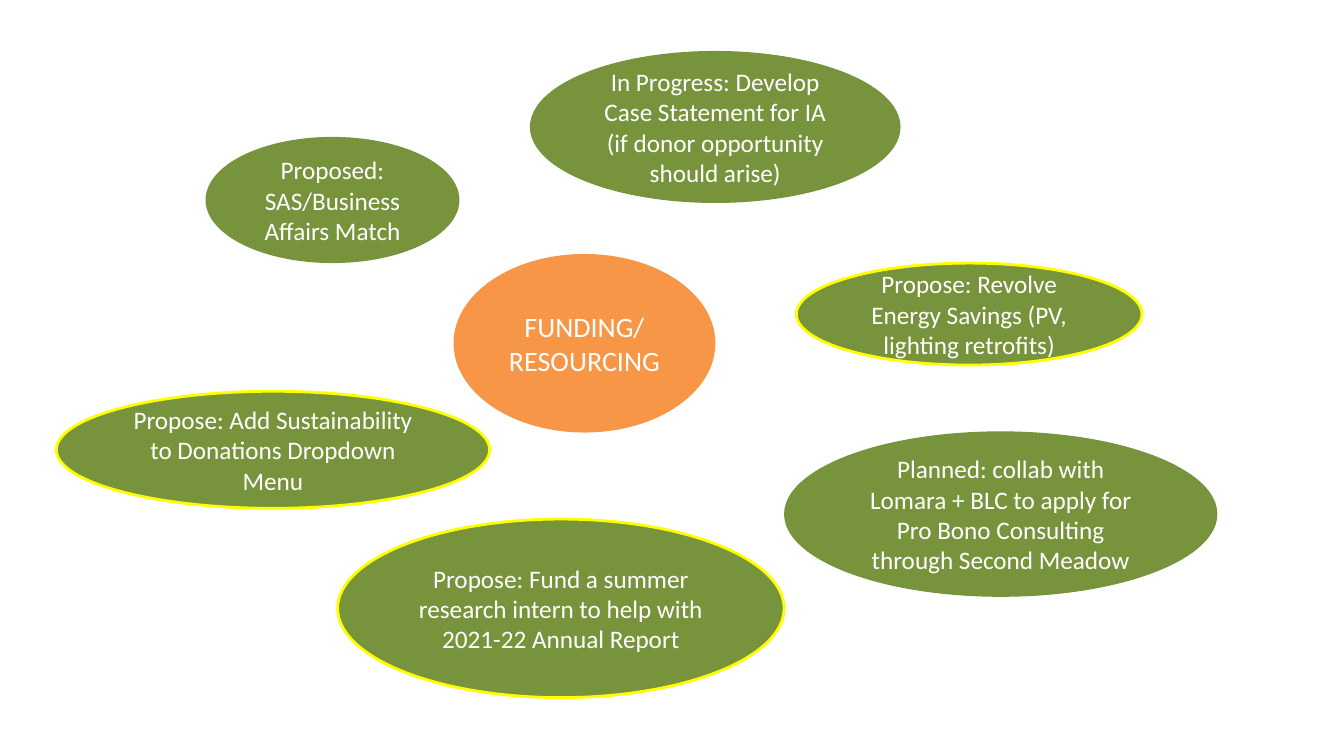
from dataclasses import dataclass

from pptx import Presentation
from pptx.dml.color import RGBColor
from pptx.enum.shapes import MSO_SHAPE
from pptx.enum.text import MSO_ANCHOR, PP_ALIGN
from pptx.slide import Slide
from pptx.util import Cm, Pt

ELLIPSE = MSO_SHAPE.OVAL
MIDDLE = MSO_ANCHOR.MIDDLE
CENTER = PP_ALIGN.CENTER

ORANGE = "F79646"
GREEN = "77933C"
YELLOW = "FFFF00"
WHITE = "FFFFFF"
BLANK_LAYOUT = 6


@dataclass(frozen=True)
class Bubble:
    text: str
    left: float
    top: float
    width: float
    height: float
    fill: str = GREEN
    outline: str | None = None
    size: int = 18


BUBBLES = [
    Bubble("FUNDING/\nRESOURCING", 11.43, 6.4, 6.6, 4.5, fill=ORANGE, size=20),
    Bubble("Proposed: SAS/Business Affairs Match", 5.18, 3.45, 6.4, 3.18),
    Bubble("In Progress: Develop Case Statement for IA (if donor opportunity should arise)",
           13.39, 1.32, 9.27, 3.76, outline=GREEN),
    Bubble("Propose: Add Sustainability to Donations Dropdown Menu",
           1.42, 9.86, 10.92, 2.95, outline=YELLOW),
    Bubble("Propose: Revolve Energy Savings (PV, lighting retrofits)",
           20.07, 6.63, 8.71, 2.57, outline=YELLOW),
    Bubble("Planned: collab with Lomara + BLC to apply for Pro Bono Consulting through Second Meadow",
           19.76, 10.87, 10.92, 4.17),
    Bubble("Propose: Fund a summer research intern to help with 2021-22 Annual Report",
           8.51, 13.08, 11.25, 4.5, outline=YELLOW),
]


def color(value: str) -> RGBColor:
    return RGBColor.from_string(value)


def draw_bubble(slide: Slide, bubble: Bubble) -> None:
    shape = slide.shapes.add_shape(
        ELLIPSE, Cm(bubble.left), Cm(bubble.top), Cm(bubble.width), Cm(bubble.height)
    )
    shape.shadow.inherit = False
    shape.fill.solid()
    shape.fill.fore_color.rgb = color(bubble.fill)
    if bubble.outline:
        shape.line.color.rgb = color(bubble.outline)
        shape.line.width = Pt(2)
    else:
        shape.line.fill.background()

    frame = shape.text_frame
    frame.word_wrap = True
    frame.vertical_anchor = MIDDLE
    frame.text = bubble.text
    for para in frame.paragraphs:
        para.alignment = CENTER
        for span in para.runs:
            span.font.name = "Calibri"
            span.font.size = Pt(bubble.size)
            span.font.color.rgb = color(WHITE)


def main() -> None:
    deck = Presentation()
    deck.slide_width = Cm(33.87)
    deck.slide_height = Cm(19.05)
    slide = deck.slides.add_slide(deck.slide_layouts[BLANK_LAYOUT])
    for bubble in BUBBLES:
        draw_bubble(slide, bubble)
    deck.save("out.pptx")


if __name__ == "__main__":
    main()
